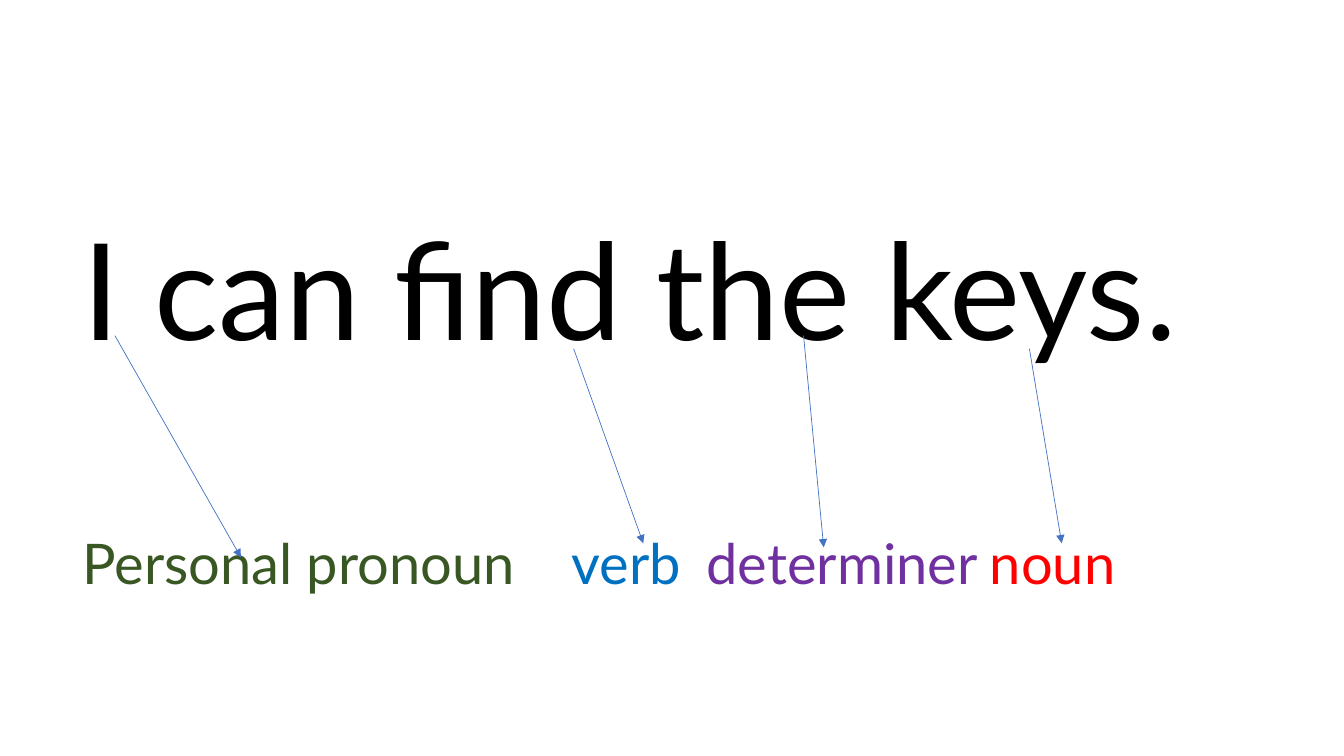
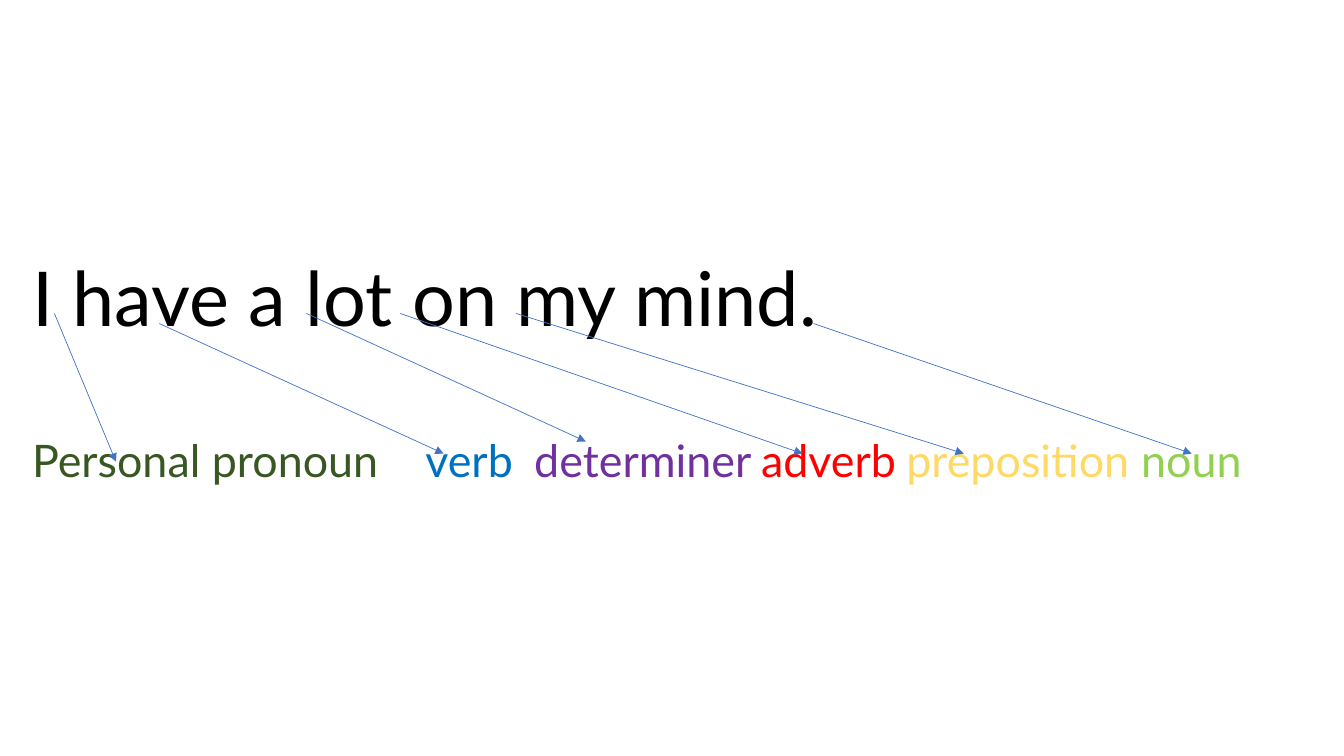
from lxml.etree import SubElement
from pptx import Presentation
from pptx.dml.color import RGBColor
from pptx.enum.shapes import MSO_CONNECTOR
from pptx.oxml.ns import qn
from pptx.util import Emu, Pt

SCALE = 9144
FONT = "Lato"
BLACK = RGBColor(0x00, 0x00, 0x00)
GREEN = RGBColor(0x38, 0x57, 0x23)
BLUE = RGBColor(0x00, 0x70, 0xC0)
PURPLE = RGBColor(0x70, 0x30, 0xA0)
RED = RGBColor(0xFF, 0x00, 0x00)
GOLD = RGBColor(0xFF, 0xD9, 0x66)
LIME = RGBColor(0x92, 0xD0, 0x50)
ARROW = RGBColor(0x44, 0x72, 0xC4)

STARTERS = [
    (0, "Personal pronoun", GREEN),
]


def px(count):
    return Emu(count * SCALE)


def add_run(para, text, size, color):
    run = para.add_run()
    run.text = text
    run.font.name = FONT
    run.font.size = Pt(size)
    run.font.color.rgb = color


def add_stops(para, stops):
    tabs = SubElement(para._p.get_or_add_pPr(), qn("a:tabLst"))
    for stop in stops:
        SubElement(tabs, qn("a:tab"), pos=str(px(stop)), algn="l")


def add_text(slide, box, sentence, size, gap, labels, small):
    frame = slide.shapes.add_textbox(*map(px, box)).text_frame
    frame.word_wrap = True
    add_run(frame.paragraphs[0], sentence, size, BLACK)
    row = frame.add_paragraph()
    row.space_before = Pt(gap)
    add_stops(row, [stop for stop, _, _ in labels if stop])
    for stop, word, color in labels:
        add_run(row, "\t" + word if stop else word, small, color)


def add_arrow(slide, *ends):
    arrow = slide.shapes.add_connector(MSO_CONNECTOR.STRAIGHT, *map(px, ends))
    arrow.line.color.rgb = ARROW
    arrow.line.width = Pt(0.5)
    SubElement(arrow.line._get_or_add_ln(), qn("a:tailEnd"), type="triangle")
    SubElement(arrow._element.spPr, qn("a:effectLst"))


def add_slide(deck, box, sentence, size, gap, labels, small, arrows):
    slide = deck.slides.add_slide(deck.slide_layouts[6])
    add_text(slide, box, sentence, size, gap, STARTERS + labels, small)
    for ends in arrows:
        add_arrow(slide, *ends)


def main():
    deck = Presentation()
    deck.slide_width, deck.slide_height = px(1333), px(750)
    add_slide(
        deck, (72, 200, 1172, 542), "I can find the keys.", 96, 115,
        [(485, "verb", BLUE), (619, "determiner", PURPLE), (900, "noun", RED)],
        40,
        [(114, 333, 239, 553), (569, 346, 638, 539),
         (797, 333, 817, 543), (1021, 346, 1053, 539)],
    )
    add_slide(
        deck, (22, 244, 1311, 306), "I have a lot on my mind.", 54, 65,
        [(390, "verb", BLUE), (498, "determiner", PURPLE),
         (723, "adverb", RED), (867, "preposition", GOLD),
         (1100, "noun", LIME)],
        32,
        [(54, 311, 115, 458), (158, 321, 440, 450), (304, 311, 581, 438),
         (397, 311, 796, 450), (512, 311, 956, 450), (807, 321, 1182, 450)],
    )
    deck.save("out.pptx")


if __name__ == "__main__":
    main()
